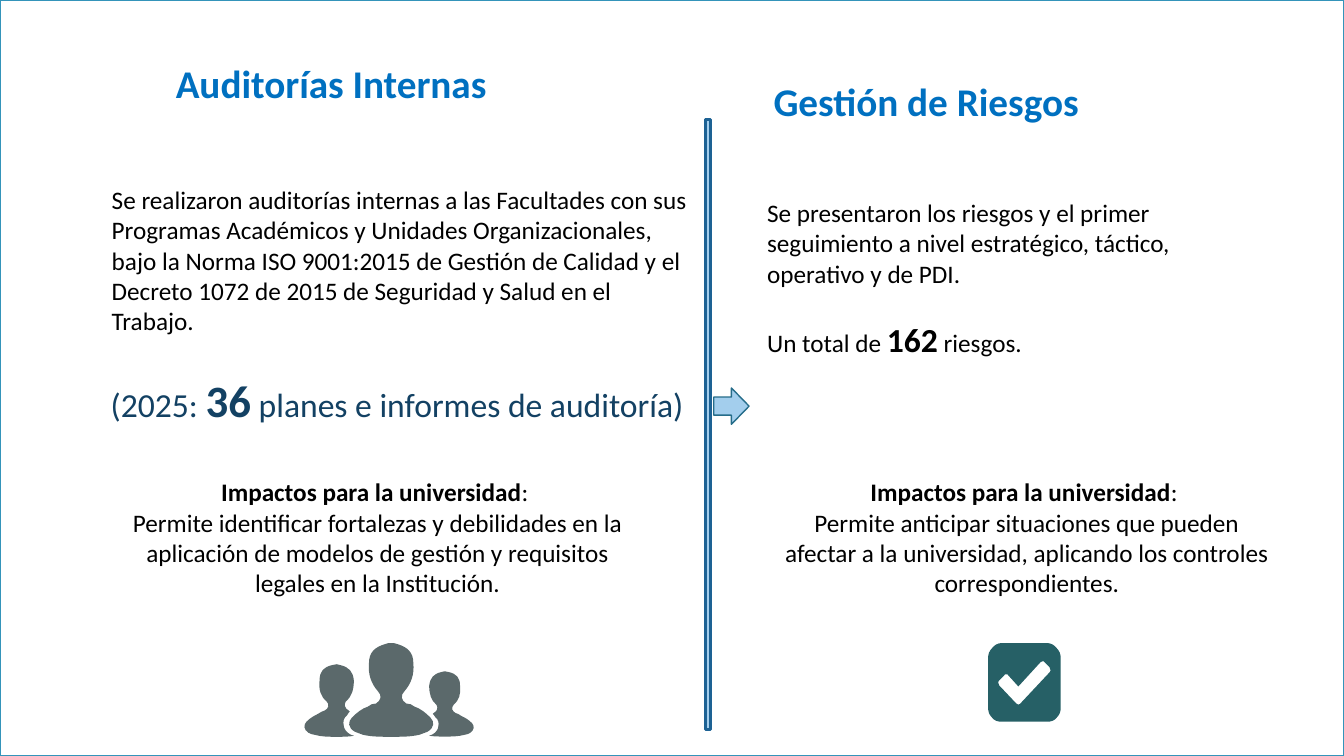
from lxml.etree import Element, SubElement
from pptx import Presentation
from pptx.dml.color import RGBColor
from pptx.enum.shapes import MSO_SHAPE
from pptx.enum.text import MSO_ANCHOR, MSO_AUTO_SIZE, PP_ALIGN
from pptx.oxml.ns import qn
from pptx.util import Inches, Pt

WIDTH, HEIGHT = Inches(13.33), Inches(7.5)
UNIT = HEIGHT / 750  # fine grid used for the icon outlines
FONT = "Calibri"
BLACK, WHITE, TITLE, NAVY = "000000", "FFFFFF", "0070C0", "134163"
SKY, DIVIDER, ARROW = "A3CEED", "1D6294", "266D8A"
FRAME, PEOPLE, CHECKBOX = "3494BA", "5B696B", "266066"

# Steps are (control, control, end) or (end); people are measured from head top
CENTRE_HALF = [
    (-2, 0, -4, 0, -6, 1), (-16, 4, -22, 9, -22, 20), (-23, 31, -20, 40, -13, 48),
    (-9, 52, -10, 57, -15, 60), (-18, 60, -21, 61, -23, 63), (-29, 65, -34, 69, -39, 74),
    (-43, 78, -43, 84, -36, 88), (-33, 89, -31, 90, -28, 91), (-19, 93, -11, 93, 0, 93),
]
SIDE_PERSON = [
    (6, 57, 7, 53, 10, 51), (11, 49, 12, 48, 13, 47), (13, 47, 12, 46, 12, 46),
    (8, 44, 7, 40, 9, 37), (15, 32, 17, 25, 17, 16), (16, 7, 12, 3, 4, 1),
    (3, 1, 1, 0, 0, 0), (-2, 0, -3, 1, -5, 1), (-13, 3, -17, 7, -17, 16),
    (-18, 25, -16, 32, -10, 37), (-7, 40, -8, 44, -12, 46), (-14, 47, -16, 47, -18, 49),
    (-22, 51, -26, 53, -30, 57), (-33, 60, -33, 65, -28, 68), (-26, 69, -24, 70, -22, 70),
    (-15, 72, -8, 72, 0, 72), (6, 72, 12, 72, 17, 71), (16, 70, 15, 70, 14, 70),
    (10, 68, 7, 64, 7, 61),
]
CHECK_MARK = [
    (1041, 667), (1042, 666, 1042, 665, 1042, 665), (1042, 664, 1042, 663, 1041, 662),
    (1036, 657), (1036, 656, 1035, 656, 1034, 656), (1033, 656, 1033, 656, 1032, 657),
    (1010, 681), (1000, 670), (1000, 669, 999, 669, 998, 669),
    (997, 669, 996, 669, 996, 670), (991, 675), (990, 676, 990, 677, 990, 677),
    (990, 678, 990, 679, 991, 680), (1008, 698), (1009, 698, 1009, 699, 1010, 699),
    (1011, 699, 1012, 698, 1012, 698),
]
TILE = [
    (1052, 702), (1052, 706, 1051, 709, 1048, 712), (1046, 715, 1042, 716, 1039, 716),
    (993, 716), (990, 716, 986, 715, 984, 712), (981, 709, 980, 706, 980, 702),
    (980, 653), (980, 649, 981, 646, 984, 643), (986, 640, 990, 638, 993, 638),
    (1039, 638), (1042, 638, 1046, 640, 1048, 643), (1051, 646, 1052, 649, 1052, 653),
]


def color(value):
    return RGBColor.from_string(value)


def place(left, top, width, height):
    """Turn percentages of the slide into lengths."""
    return [round(share * side / 100) for share, side in
            zip((left, top, width, height), (WIDTH, HEIGHT, WIDTH, HEIGHT))]


def paint(shape, fill, line=None, weight=1):
    shape.shadow.inherit = False
    shape.fill.solid()
    shape.fill.fore_color.rgb = color(fill)
    if line:
        shape.line.color.rgb = color(line)
        shape.line.width = Pt(weight)
    else:
        shape.line.fill.background()


def add_preset(page, kind, area, fill, line=None, weight=1):
    shape = page.shapes.add_shape(kind, *place(*area))
    paint(shape, fill, line, weight)
    return shape


def add_text(page, area, paragraphs, align=PP_ALIGN.LEFT, ink=BLACK, gap=0):
    """Each paragraph is a list of (text, size, bold)."""
    box = page.shapes.add_textbox(*place(*area))
    frame = box.text_frame
    frame.word_wrap = True
    frame.auto_size = MSO_AUTO_SIZE.SHAPE_TO_FIT_TEXT
    for index, spans in enumerate(paragraphs):
        para = frame.add_paragraph() if index else frame.paragraphs[0]
        para.alignment = align
        if index and gap:
            para.space_before = Pt(gap)
        for text, size, bold in spans:
            span = para.add_run()
            span.text = text
            span.font.name, span.font.size, span.font.bold = FONT, Pt(size), bold
            span.font.color.rgb = color(ink)
    return frame


def add_title(page, left, top, text):
    frame = add_text(page, (left, top, 34.28, 10.53), [[(text, 28, True)]],
                     PP_ALIGN.CENTER, TITLE)
    frame.auto_size = MSO_AUTO_SIZE.NONE
    frame.vertical_anchor = MSO_ANCHOR.MIDDLE
    frame.paragraphs[0].line_spacing = 0.9


def add_impact(page, left, text):
    heading = [("Impactos para la universidad", 18, True), (": ", 18, False)]
    add_text(page, (left, 62.4, 38.48, 17.47), [heading, [(text, 18, False)]],
             PP_ALIGN.CENTER)


def chain(start, steps):
    """A start point followed by three points for each curve."""
    points = [start]
    for step in steps:
        curve = step if len(step) == 6 else step * 3
        points += [curve[0:2], curve[2:4], curve[4:6]]
    return points


def move(points, left, top, scale_x=1, scale_y=1):
    return [(left + x * scale_x, top + y * scale_y) for x, y in points]


def add_outline(page, contours, fill):
    """One freeform of closed contours, its segments bent into cubic curves."""
    contours = [move(points, 0, 0, UNIT, UNIT) for points in contours]
    builder = page.shapes.build_freeform(*contours[0][0], scale=1.0)
    for index, points in enumerate(contours):
        if index:
            builder.move_to(*points[0])
        builder.add_line_segments(points[3::3], close=True)
    shape = builder.convert_to_shape()
    curves = [points[at:at + 3] for points in contours for at in range(1, len(points), 3)]
    segments = list(shape.element.iter(qn("a:lnTo")))
    for segment, curve in zip(segments, curves):
        bend = Element(qn("a:cubicBezTo"))
        for x, y in curve:
            SubElement(bend, qn("a:pt"), x=str(round(x - shape.left)),
                       y=str(round(y - shape.top)))
        segment.getparent().replace(segment, bend)
    paint(shape, fill)


def add_people(page):
    half = chain((0, 0), CENTRE_HALF)
    centre = half + [(-x, y) for x, y in reversed(half[:-1])]
    side = chain((7, 61), SIDE_PERSON)
    add_outline(page, [move(centre, 388, 638), move(side, 441, 666, -0.9, 0.9),
                       move(side, 334, 659)], PEOPLE)


def add_checkbox(page):
    add_outline(page, [chain((1012, 698), CHECK_MARK), chain((1052, 653), TILE)], CHECKBOX)


def main():
    deck = Presentation()
    deck.slide_width, deck.slide_height = WIDTH, HEIGHT
    page = deck.slides.add_slide(deck.slide_layouts[6])

    # Slide frame, translucent white
    frame = add_preset(page, MSO_SHAPE.RECTANGLE, (0, 0, 100, 100), WHITE, FRAME)
    white = frame.element.spPr.find(qn("a:solidFill"))[0]
    SubElement(white, qn("a:alpha")).set("val", "32000")

    # Headings
    add_title(page, 7.5, 6.13, "Auditorías Internas")
    add_title(page, 51.76, 8.53, "Gestión de Riesgos")

    # Risks
    add_text(page, (56.34, 25.47, 36.08, 26.93), [
        [("Se presentaron los riesgos y el primer seguimiento a nivel estratégico, "
          "táctico, operativo y de PDI.", 18, False)],
        [("Un total de ", 18, False), ("162", 24, True), (" riesgos.", 18, False)],
    ], gap=22)

    # Divider and arrow
    add_preset(page, MSO_SHAPE.RECTANGLE, (52.51, 15.87, 0.38, 80.67), SKY, DIVIDER, 2.25)
    add_preset(page, MSO_SHAPE.RIGHT_ARROW, (53.11, 51.33, 2.63, 4.8), SKY, ARROW)

    # Audits
    add_text(page, (7.58, 23.73, 44.64, 25.6), [[(
        "Se realizaron auditorías internas a las Facultades con sus Programas Académicos "
        "y Unidades Organizacionales, bajo la Norma ISO 9001:2015 de Gestión de Calidad "
        "y el Decreto 1072 de 2015 de Seguridad y Salud en el Trabajo.", 18, False)]])

    # Impacts and icons
    add_impact(page, 8.85, "Permite identificar fortalezas y debilidades en la aplicación "
               "de modelos de gestión y requisitos legales en la Institución.")
    add_impact(page, 57.16, "Permite anticipar situaciones que pueden afectar a la "
               "universidad, aplicando los controles correspondientes.")
    add_people(page)
    add_checkbox(page)

    # Audit total
    add_text(page, (7.5, 48.67, 45.09, 8.53), [[
        ("(2025: ", 24, False), ("36", 32, True),
        (" planes e informes de auditoría)", 24, False)]], ink=NAVY)

    deck.save("out.pptx")


if __name__ == "__main__":
    main()
